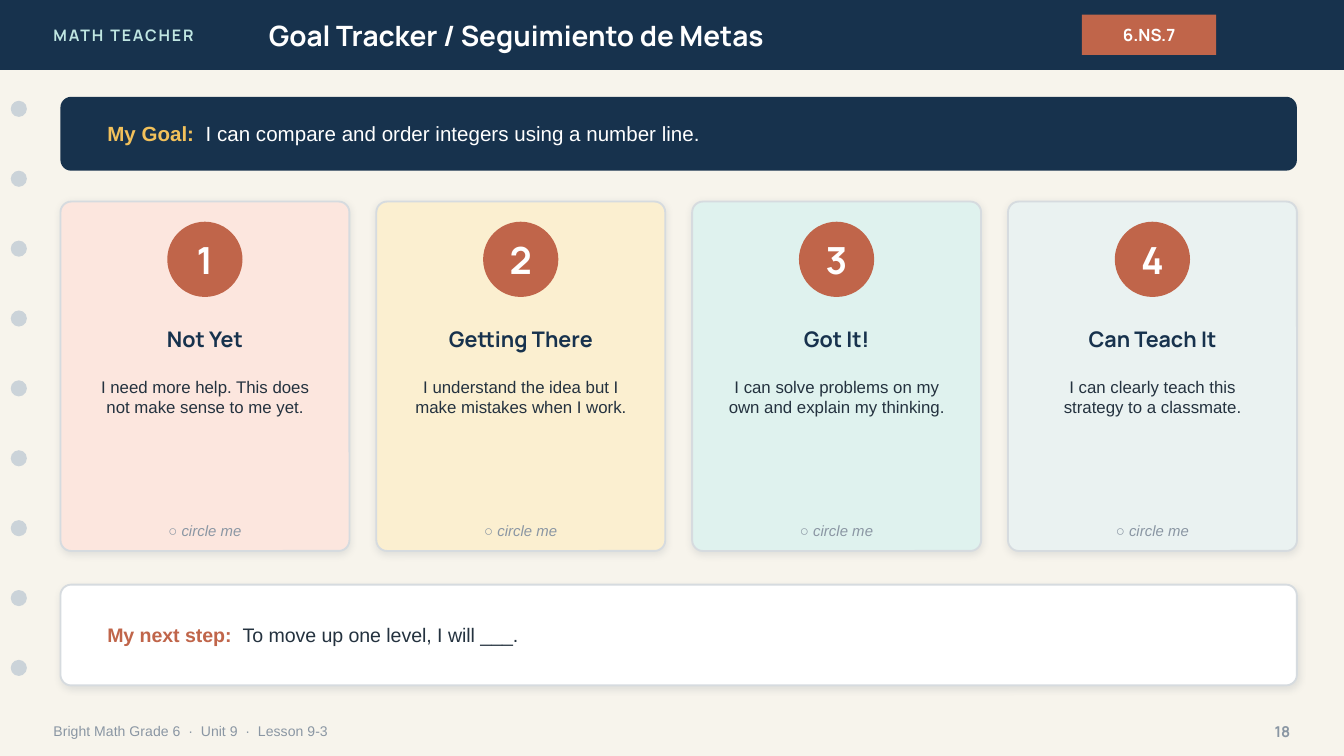
"""Build a goal tracker slide with four self-rating cards."""
from lxml.etree import SubElement
from pptx import Presentation
from pptx.dml.color import RGBColor as Rgb
from pptx.enum.shapes import MSO_SHAPE as Kind
from pptx.enum.text import MSO_ANCHOR as Anchor, MSO_AUTO_SIZE as Fit, PP_ALIGN as Align
from pptx.oxml.ns import qn
from pptx.util import Inches, Pt

HUES = {
    "page": "F7F4EC", "navy": "17324D", "rust": "C0654A", "white": "FFFFFF",
    "mint": "BFE6E2", "gold": "F2C15B", "ink": "24323F", "gray": "8A96A3",
    "hole": "CBD3D9", "edge": "D6DBDF", "shade": "1C2E42",
    "pink": "FCE6DE", "cream": "FBEFD0", "aqua": "DFF2EE", "mist": "EAF2F1",
}
HEAD, BODY = "Manrope", "Arial"
CARDS = [
    ("Not Yet", "I need more help. This does not make sense to me yet.", "pink"),
    ("Getting There", "I understand the idea but I make mistakes when I work.", "cream"),
    ("Got It!", "I can solve problems on my own and explain my thinking.", "aqua"),
    ("Can Teach It", "I can clearly teach this strategy to a classmate.", "mist"),
]


def hue(name):
    """Return the named colour."""
    return Rgb.from_string(HUES[name])


def style(run, size, color, face=BODY, bold=False, slant=False):
    """Format one run."""
    font = run.font
    font.size, font.name = Pt(size), face
    font.bold, font.italic = bold, slant
    font.color.rgb = hue(color)


def write(shape, text, size, color, face=BODY, bold=False, slant=False,
          align=Align.LEFT, anchor=Anchor.MIDDLE):
    """Put one styled line of text in a shape."""
    frame = shape.text_frame
    frame.text = text
    frame.word_wrap, frame.auto_size = True, Fit.NONE
    frame.vertical_anchor = anchor
    para = frame.paragraphs[0]
    para.alignment = align
    style(para.runs[0], size, color, face, bold, slant)
    return para


def label(slide, box, text, size, color, **look):
    """Add a text box and return its paragraph."""
    shape = slide.shapes.add_textbox(*map(Inches, box))
    return write(shape, text, size, color, **look)


def block(slide, kind, box, fill):
    """Add a plain filled shape."""
    shape = slide.shapes.add_shape(kind, *map(Inches, box))
    shape.shadow.inherit = False
    shape.fill.solid()
    shape.fill.fore_color.rgb = hue(fill)
    shape.line.fill.background()
    return shape


def panel(slide, box, fill):
    """Add a rounded panel with a fixed corner radius."""
    shape = block(slide, Kind.ROUNDED_RECTANGLE, box, fill)
    shape.adjustments[0] = 0.08 / min(box[2:])
    return shape


def raised(slide, box, fill):
    """Add a rounded panel with an edge and a soft shadow."""
    shape = panel(slide, box, fill)
    shape.line.color.rgb = hue("edge")
    shape.line.width = Pt(1)
    effects = shape.element.spPr.find(qn("a:effectLst"))
    shadow = SubElement(effects, qn("a:outerShdw"), blurRad=str(Pt(4)),
                        dist=str(Pt(1)), dir="5400000", algn="bl", rotWithShape="0")
    color = SubElement(shadow, qn("a:srgbClr"), val=HUES["shade"])
    SubElement(color, qn("a:alpha"), val="10000")


def prompt(slide, top, high, size, lead, lead_hue, text, text_hue):
    """Add a bold lead followed by plain text."""
    para = label(slide, (0.7, top, 8.7, high), lead, size, lead_hue, bold=True)
    run = para.add_run()
    run.text = text
    style(run, size, text_hue)


def header(slide):
    """Add the top bar with its title and badge."""
    block(slide, Kind.RECTANGLE, (0, 0, 10, 0.52), "navy")
    para = label(slide, (0.3, 0, 2.4, 0.52), "MATH TEACHER", 8.5, "mint",
                 face=HEAD, bold=True)
    para.runs[0].font._element.set("spc", "100")
    title = slide.shapes.title
    title.left, title.top, title.width, title.height = map(Inches, (1.9, 0, 5.6, 0.52))
    write(title, "Goal Tracker / Seguimiento de Metas", 15, "white", face=HEAD, bold=True)
    title.element.getparent().append(title.element)
    badge = block(slide, Kind.RECTANGLE, (8.05, 0.11, 1, 0.3), "rust")
    write(badge, "6.NS.7", 9, "white", face=HEAD, bold=True, align=Align.CENTER)


def card(slide, num, name, text, fill):
    """Add one numbered rating card."""
    left, mid = 0.45 + 2.35 * (num - 1), Align.CENTER
    raised(slide, (left, 1.5, 2.15, 2.6), fill)
    disc = (left + (2.15 - 0.56) / 2, 1.65, 0.56, 0.56)
    block(slide, Kind.OVAL, disc, "rust")
    label(slide, disc, str(num), 20, "white", face=HEAD, bold=True, align=mid)
    label(slide, (left + 0.05, 2.35, 2.05, 0.35), name, 11.5, "navy",
          face=HEAD, bold=True, align=mid)
    label(slide, (left + 0.12, 2.75, 1.91, 1.15), text, 9, "ink",
          align=mid, anchor=Anchor.TOP)
    label(slide, (left + 0.05, 3.85, 2.05, 0.2), "○ circle me", 8, "gray",
          slant=True, align=mid)


def footer(slide):
    """Add the course line and page number."""
    label(slide, (0.3, 5.3, 7, 0.28), "Bright Math Grade 6  ·  Unit 9  ·  Lesson 9-3",
          7.5, "gray")
    label(slide, (9.2, 5.3, 0.5, 0.28), "18", 8, "gray", face=HEAD, bold=True,
          align=Align.RIGHT)


def main():
    """Build and save the slide."""
    deck = Presentation()
    deck.slide_width, deck.slide_height = Inches(10), Inches(10 * 9 / 16)
    slide = deck.slides.add_slide(deck.slide_layouts[5])
    slide.background.fill.solid()
    slide.background.fill.fore_color.rgb = hue("page")
    header(slide)
    for row in range(9):
        block(slide, Kind.OVAL, (0.08, 0.75 + 0.52 * row, 0.12, 0.12), "hole")
    footer(slide)
    panel(slide, (0.45, 0.72, 9.2, 0.55), "navy")
    prompt(slide, 0.72, 0.55, 11, "My Goal:  ", "gold",
           "I can compare and order integers using a number line.", "white")
    for num, (name, text, fill) in enumerate(CARDS, 1):
        card(slide, num, name, text, fill)
    raised(slide, (0.45, 4.35, 9.2, 0.75), "white")
    prompt(slide, 4.35, 0.75, 10.5, "My next step:  ", "rust",
           "To move up one level, I will ___.", "ink")
    deck.save("out.pptx")


if __name__ == "__main__":
    main()
